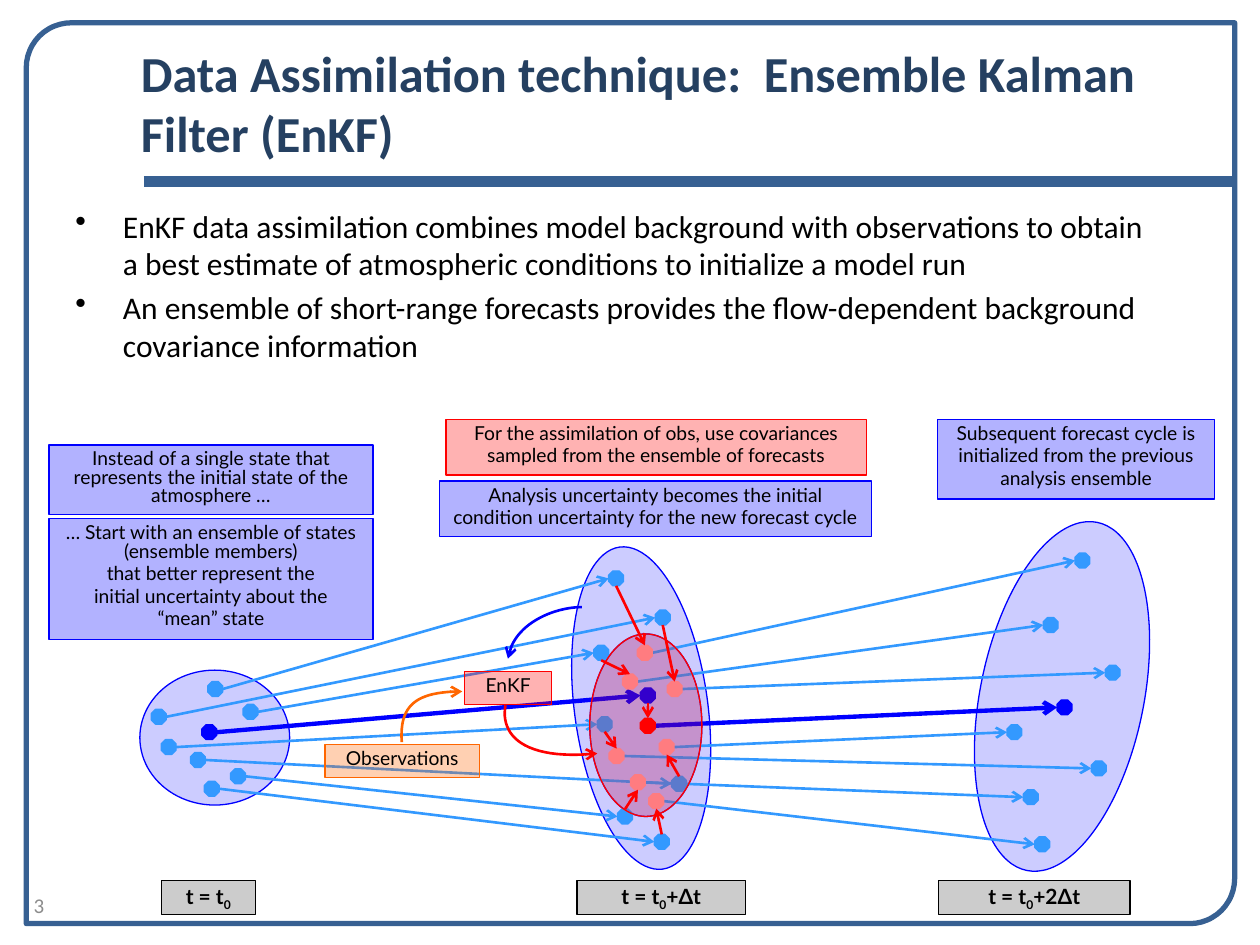
from lxml import etree
from pptx import Presentation
from pptx.dml.color import RGBColor
from pptx.enum.shapes import MSO_CONNECTOR, MSO_SHAPE
from pptx.enum.text import MSO_ANCHOR, PP_ALIGN
from pptx.oxml.ns import qn
from pptx.util import Cm, Pt

STRAIGHT = MSO_CONNECTOR.STRAIGHT
RECT, ELLIPSE, OCTAGON = MSO_SHAPE.RECTANGLE, MSO_SHAPE.OVAL, MSO_SHAPE.OCTAGON
FRAME = MSO_SHAPE.ROUND_2_DIAG_RECTANGLE
TOP, MIDDLE, BOTTOM = MSO_ANCHOR.TOP, MSO_ANCHOR.MIDDLE, MSO_ANCHOR.BOTTOM
LEFT, CENTER = PP_ALIGN.LEFT, PP_ALIGN.CENTER

BLACK = RGBColor(0, 0, 0)
GREY = RGBColor(0x8C, 0x8C, 0x8C)
NAVY = RGBColor(0x25, 0x40, 0x61)
STEEL = RGBColor(0x37, 0x60, 0x92)
BLUE = RGBColor(0, 0, 0xFF)
SKY = RGBColor(0x33, 0x99, 0xFF)
RED = RGBColor(0xFF, 0, 0)
PINK = RGBColor(0xFF, 0x7C, 0x80)
ORANGE = RGBColor(0xFF, 0x66, 0)

RADIUS = 0.15

# Centres of the ensemble members at each stage, in cm; the mean comes last.
INITIAL = [(4.34, 13.89), (3.2, 14.45), (5.05, 14.35), (3.4, 15.06),
           (3.99, 15.32), (4.8, 15.65), (4.27, 15.9), (4.22, 14.76)]
FORECAST = [(12.42, 11.66), (13.36, 12.45), (12.12, 13.16), (12.19, 14.6),
            (13.69, 15.8), (12.6, 16.46), (13.34, 16.97), (13.06, 14.02)]
ANALYSIS = [(13, 13.16), (13.6, 13.89), (12.7, 13.74), (12.43, 15.24),
            (13.44, 15.06), (12.86, 15.77), (13.23, 16.15), (13.06, 14.63)]
NEXT = [(21.82, 11.3), (22.43, 13.56), (21.18, 12.6), (22.15, 15.49),
        (20.45, 14.76), (20.78, 16.07), (21.01, 17.02), (21.46, 14.26)]

NOTES = [
    (RED, (8.99, 8.46, 8.48, 1.12), ["For the assimilation of obs, use covariances",
                                     "sampled from the ensemble of forecasts"]),
    (BLUE, (8.86, 9.7, 8.71, 1.12), ["Analysis uncertainty becomes the initial",
                                     "condition uncertainty for the new forecast cycle"]),
    (BLUE, (18.9, 8.46, 5.59, 1.6), ["Subsequent forecast cycle is",
                                     "initialized from the previous", "analysis ensemble"]),
    (BLUE, (0.99, 10.46, 6.53, 2.44), ["… Start with an ensemble of states (ensemble members)",
                                       "that better represent the",
                                       "initial uncertainty about the", "“mean” state"]),
    (BLUE, (0.99, 8.97, 6.53, 1.4), ["Instead of a single state that represents "
                                     "the initial state of the atmosphere …"]),
    (RED, (9.37, 13.54, 1.75, 0.66), ["EnKF"]),
    (ORANGE, (6.55, 15.01, 3.12, 0.66), ["Observations"]),
]

# Text between ~ marks is subscript.
TIMES = [(3.25, 1.9, "t = t~0~"), (11.63, 3.4, "t = t~0~+Δt"),
         (18.92, 3.86, "t = t~0~+2Δt")]

CURVES = [
    (BLUE, [(11.73, 12.24), (11.18, 12.24), (10.34, 12.57), (10.24, 13.28)]),
    (ORANGE, [(8.1, 14.96), (8.05, 14.22), (8.38, 13.94), (9.32, 13.94)]),
    (RED, [(10.19, 14.22), (10.08, 14.81), (10.54, 15.34), (12.04, 15.19)]),
]


def write(tf, lines, font="Lato", size=11, color=BLACK, bold=False, align=CENTER,
          anchor=TOP, spacing=None, bullet=False, wrap=True):
    tf.word_wrap = wrap
    tf.vertical_anchor = anchor
    for i, line in enumerate(lines):
        p = tf.paragraphs[0] if i == 0 else tf.add_paragraph()
        p.alignment = align
        if spacing:
            p.line_spacing = spacing
        p.space_before = Pt(0.2 * size if i else 0)
        if bullet:
            pPr = p._p.get_or_add_pPr()
            pPr.set("marL", str(Cm(0.96)))
            pPr.set("indent", str(-Cm(0.96)))
            etree.SubElement(pPr, qn("a:buChar"), char="•")
        for j, part in enumerate(line.split("~")):
            if not part:
                continue
            r = p.add_run()
            r.text = part
            r.font.name, r.font.size, r.font.bold = font, Pt(size), bold
            r.font.color.rgb = color
            if j % 2:
                r._r.get_or_add_rPr().set("baseline", "-25000")


def cubic(points, steps=24):
    """Return points along a cubic Bezier curve, in EMU."""
    result = []
    for i in range(steps + 1):
        t = i / steps
        weights = ((1 - t) ** 3, 3 * t * (1 - t) ** 2, 3 * t * t * (1 - t), t ** 3)
        result.append(tuple(Cm(sum(w * pt[k] for w, pt in zip(weights, points)))
                            for k in (0, 1)))
    return result


class Canvas:
    def __init__(self, slide):
        self.slide = slide
        self.shapes = slide.shapes

    def shape(self, kind, box, color, opacity=100, width=0.75, rotation=0):
        sp = self.shapes.add_shape(kind, *map(Cm, box))
        sp.shadow.inherit = False
        sp.rotation = rotation
        sp.line.color.rgb = color
        sp.line.width = Pt(width)
        if opacity:
            sp.fill.solid()
            sp.fill.fore_color.rgb = color
            if opacity < 100:
                clr = sp._element.spPr.find(qn("a:solidFill"))[0]
                etree.SubElement(clr, qn("a:alpha"), val=str(opacity * 1000))
        else:
            sp.fill.background()
        return sp

    def dots(self, centers, color, mean_color):
        for x, y in centers:
            c = mean_color if (x, y) == centers[-1] else color
            self.shape(OCTAGON, (x - RADIUS, y - RADIUS, 2 * RADIUS, 2 * RADIUS), c)

    def line(self, start, end, color, width, arrow=True):
        cn = self.shapes.add_connector(STRAIGHT, *map(Cm, start + end))
        self.stroke(cn, color, width, arrow)
        etree.SubElement(cn._element.spPr, qn("a:effectLst"))

    def stroke(self, sp, color, width, arrow=True):
        sp.line.color.rgb = color
        sp.line.width = Pt(width)
        if arrow:
            etree.SubElement(sp.line._get_or_add_ln(), qn("a:tailEnd"), type="arrow")

    def curve(self, points, color):
        first, *rest = cubic(points)
        builder = self.shapes.build_freeform(*first)
        builder.add_line_segments(rest, close=False)
        sp = builder.convert_to_shape()
        sp.shadow.inherit = False
        sp.fill.background()
        self.stroke(sp, color, 1.5)

    def forecast(self, starts, ends):
        """Link each member's right side to the left side of its successor."""
        for (x1, y1), (x2, y2) in zip(starts, ends):
            mean = (x1, y1) == starts[-1]
            self.line((x1 + RADIUS, y1), (x2 - RADIUS, y2),
                      BLUE if mean else SKY, 2.5 if mean else 1.5)

    def update(self, starts, ends):
        """Link each member vertically to its analysed state."""
        for (x1, y1), (x2, y2) in zip(starts, ends):
            gap = RADIUS if y2 > y1 else -RADIUS
            self.line((x1, y1 + gap), (x2, y2 - gap), RED, 1.5)

    def text(self, box, lines, **style):
        tf = self.shapes.add_textbox(*map(Cm, box)).text_frame
        write(tf, lines, font="Calibri", align=LEFT, **style)
        return tf

    def label(self, box, lines, color, opacity=30, **style):
        sp = self.shape(RECT, box, color, opacity)
        write(sp.text_frame, lines, spacing=0.8, **style)


def main():
    prs = Presentation()
    prs.slide_width, prs.slide_height = Cm(25.4), Cm(19.05)
    c = Canvas(prs.slides.add_slide(prs.slide_layouts[6]))

    frame = c.shape(FRAME, (0.53, 0.46, 24.36, 18.16), STEEL, opacity=0, width=3)
    frame.adjustments[0], frame.adjustments[1] = 0.05, 0
    c.line((2.9, 3.66), (24.89, 3.66), STEEL, 6, arrow=False)
    c.text((2.59, 0.84, 22.02, 2.57),
           ["Data Assimilation technique:  Ensemble Kalman Filter (EnKF)"],
           size=28.8, color=NAVY, bold=True, anchor=BOTTOM)
    body = c.text((1.27, 4.04, 23.34, 14.55), [
        "EnKF data assimilation combines model background with observations to obtain "
        "a best estimate of atmospheric conditions to initialize a model run",
        "An ensemble of short-range forecasts provides the flow-dependent background "
        "covariance information"], size=18, bullet=True)
    body.margin_right = Cm(1.4)

    analysis_area = (11.89, 12.78, 2.26, 3.68)
    c.shape(ELLIPSE, (9.65, 12.93, 6.55, 2.69), BLUE, 20, rotation=82.4)
    c.shape(ELLIPSE, analysis_area, BLUE, 10)
    c.shape(ELLIPSE, (2.82, 13.51, 3.02, 2.72), BLUE, 20)
    c.shape(ELLIPSE, (19.76, 10.46, 3.3, 7.16), BLUE, 20, rotation=11.4)
    for centers in (INITIAL, FORECAST, NEXT):
        c.dots(centers, SKY, BLUE)
    c.forecast(INITIAL, FORECAST)
    c.forecast(ANALYSIS, NEXT)
    c.shape(ELLIPSE, analysis_area, RED, 20)
    c.dots(ANALYSIS, PINK, RED)

    for x, width, text in TIMES:
        c.label((x, 17.75, width, 0.69), [text], BLACK, 20,
                size=12, bold=True, anchor=MIDDLE)
    for color, box, lines in NOTES:
        c.label(box, lines, color, wrap=len(lines) != 2)
    for color, points in CURVES:
        c.curve(points, color)
    c.update(FORECAST, ANALYSIS)
    c.text((0.43, 17.6, 1.04, 1.02), ["3"], size=12, color=GREY, anchor=BOTTOM)
    prs.save("out.pptx")


if __name__ == "__main__":
    main()
